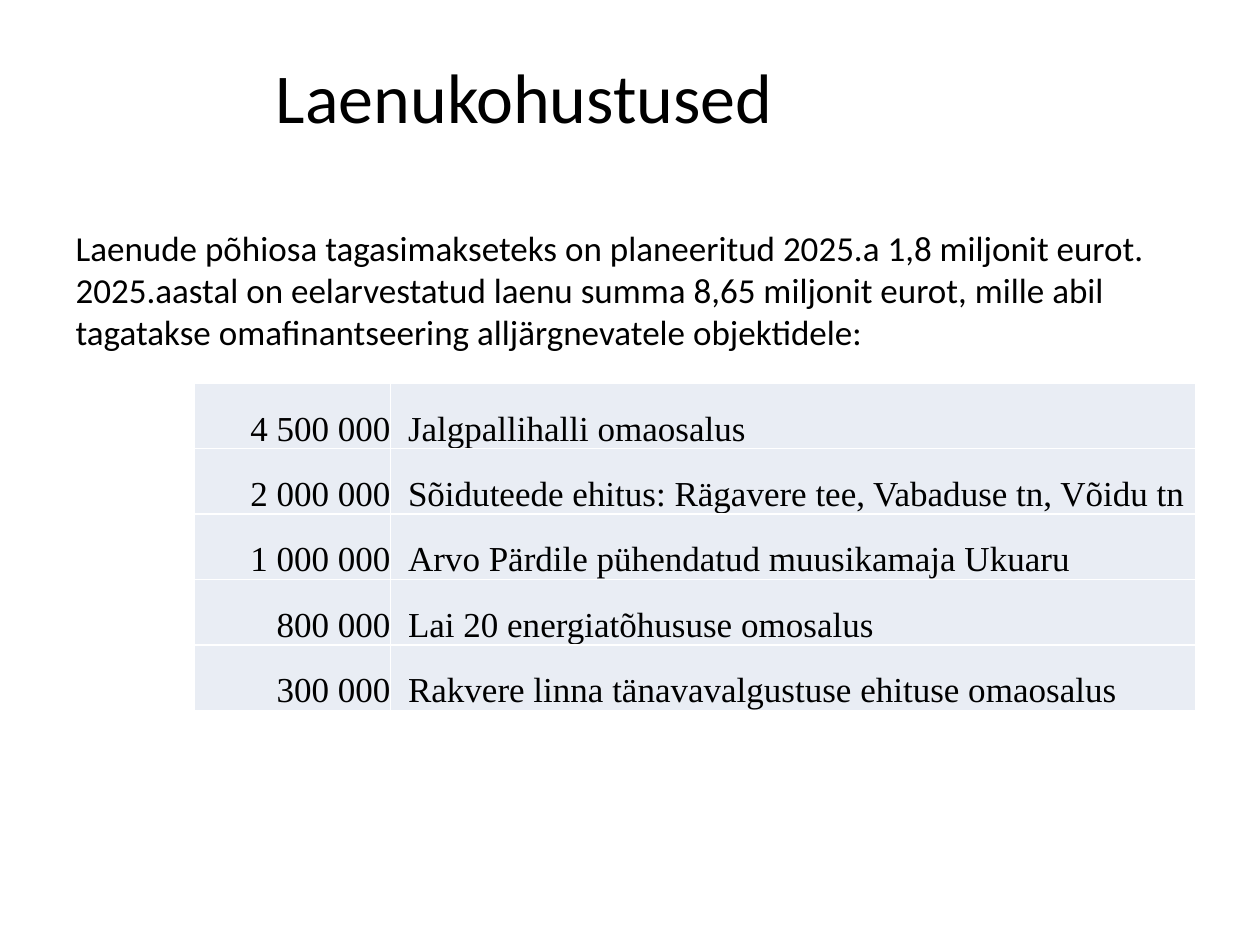
"""Build the loan obligations slide with its funding table."""
import pptx
import pptx.dml.color
import pptx.enum.text
import pptx.oxml
import pptx.oxml.ns
import pptx.util

Pt = pptx.util.Pt
Align = pptx.enum.text.PP_ALIGN
Anchor = pptx.enum.text.MSO_ANCHOR
Fit = pptx.enum.text.MSO_AUTO_SIZE

HEAD = "Laenukohustused"
BODY = (
    "Laenude põhiosa tagasimakseteks on planeeritud 2025.a 1,8 miljonit eurot. "
    "2025.aastal on eelarvestatud laenu summa 8,65 miljonit eurot, mille abil "
    "tagatakse omafinantseering alljärgnevatele objektidele:"
)
LOANS = [
    ("4 500 000", "Jalgpallihalli omaosalus"),
    ("2 000 000", "Sõiduteede ehitus: Rägavere tee, Vabaduse tn, Võidu tn"),
    ("1 000 000", "Arvo Pärdile pühendatud muusikamaja Ukuaru"),
    ("800 000", "Lai 20 energiatõhususe omosalus"),
    ("300 000", "Rakvere linna tänavavalgustuse ehituse omaosalus"),
]
THEME = {
    "ink": "000000",
    "band": "E9EDF4",
    "rule": "FFFFFF",
    "head": {"name": "Calibri", "size": Pt(40), "bold": False},
    "body": {"name": "Calibri", "size": Pt(20), "bold": False},
    "cell": {"name": "Times New Roman", "size": Pt(20), "bold": False},
}
SIZE = (720, 540)
HEAD_BOX = (150.5, 20.9, 533.5, 67.7)
BODY_BOX = (36, 126, 648, 414)
GRID_AT = (110.9, 218.9)
COLS = (112.3, 460.1)
ROW = 37.44
GAP = 10


def put(item, values):
    for name, value in values.items():
        setattr(item, name, value)


def tint(code):
    return pptx.dml.color.RGBColor.from_string(code)


def write(frame, text, style, align):
    frame.text = text
    para = frame.paragraphs[0]
    put(para, {"alignment": align, "space_before": Pt(0)})
    font = para.runs[0].font
    put(font, THEME[style])
    font.color.rgb = tint(THEME["ink"])
    return para


def place(shape, box, text, style, anchor):
    names = ("left", "top", "width", "height")
    put(shape, dict(zip(names, map(Pt, box))))
    frame = shape.text_frame
    put(frame, {"word_wrap": True, "auto_size": Fit.NONE, "vertical_anchor": anchor})
    return write(frame, text, style, Align.LEFT)


def plain(para):
    props = para._p.get_or_add_pPr()
    put(props, {})
    for name in ("marL", "indent"):
        props.set(name, "0")
    props.append(pptx.oxml.parse_xml(f'<a:buNone {pptx.oxml.ns.nsdecls("a")}/>'))


def edge(cell):
    props = cell._tc.get_or_add_tcPr()
    for side in "LRTB":
        props.append(pptx.oxml.parse_xml(
            f'<a:ln{side} {pptx.oxml.ns.nsdecls("a")} w="{Pt(1)}"><a:solidFill>'
            f'<a:srgbClr val="{THEME["rule"]}"/></a:solidFill></a:ln{side}>'
        ))


def fill_cell(cell, text, align, inset):
    edge(cell)
    put(cell, {
        "margin_left": Pt(inset), "margin_right": Pt(0), "margin_top": Pt(0),
        "margin_bottom": Pt(0), "vertical_anchor": Anchor.BOTTOM,
    })
    cell.fill.solid()
    cell.fill.fore_color.rgb = tint(THEME["band"])
    write(cell.text_frame, text, "cell", align)


def add_loans(slide):
    box = (*GRID_AT, sum(COLS), ROW * len(LOANS))
    table = slide.shapes.add_table(len(LOANS), len(COLS), *map(Pt, box)).table
    put(table, {"first_row": False, "horz_banding": False})
    for col, width in zip(table.columns, COLS):
        col.width = Pt(width)
    for row, (sum_text, goal) in zip(table.rows, LOANS):
        row.height = Pt(ROW)
        fill_cell(row.cells[0], sum_text, Align.RIGHT, 0)
        fill_cell(row.cells[1], goal, Align.LEFT, GAP)


def main():
    deck = pptx.Presentation()
    put(deck, dict(zip(("slide_width", "slide_height"), map(Pt, SIZE))))
    slide = deck.slides.add_slide(deck.slide_layouts[1])
    place(slide.shapes.title, HEAD_BOX, HEAD, "head", Anchor.MIDDLE)
    plain(place(slide.placeholders[1], BODY_BOX, BODY, "body", Anchor.TOP))
    add_loans(slide)
    deck.save("out.pptx")


if __name__ == "__main__":
    main()
